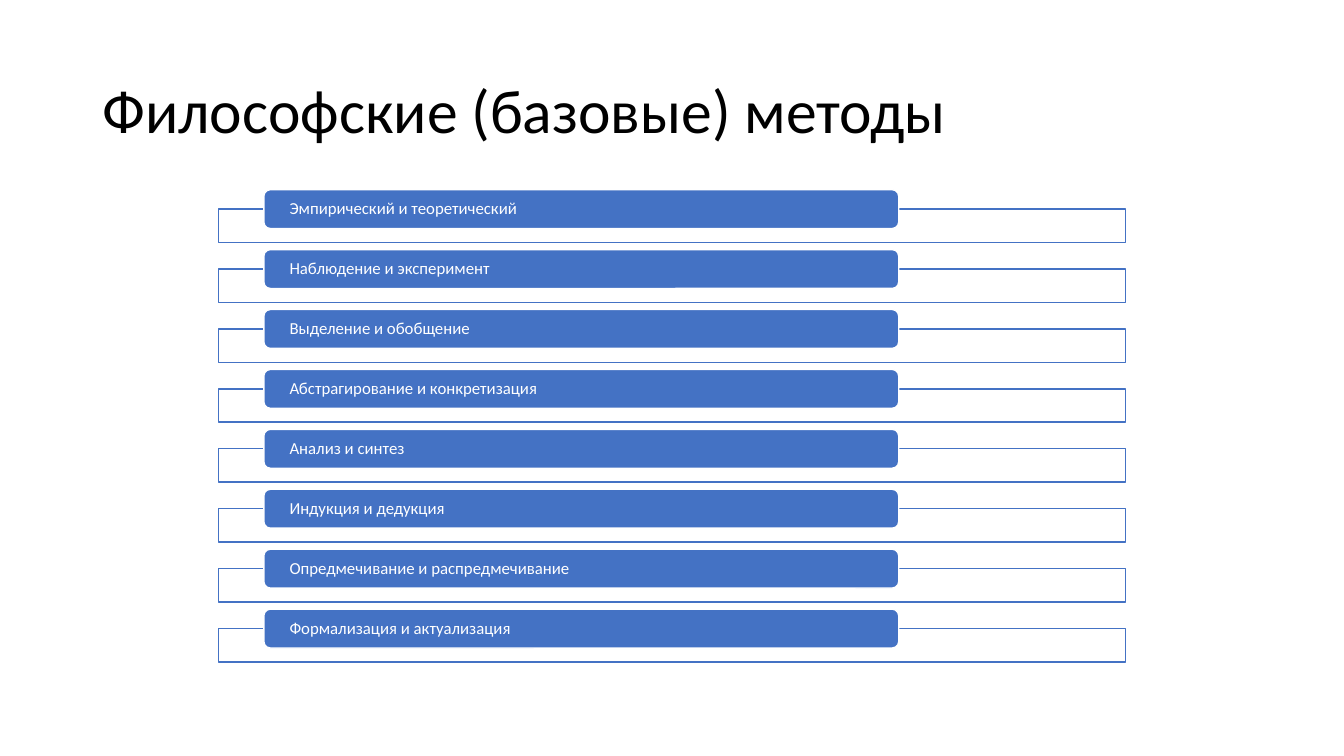
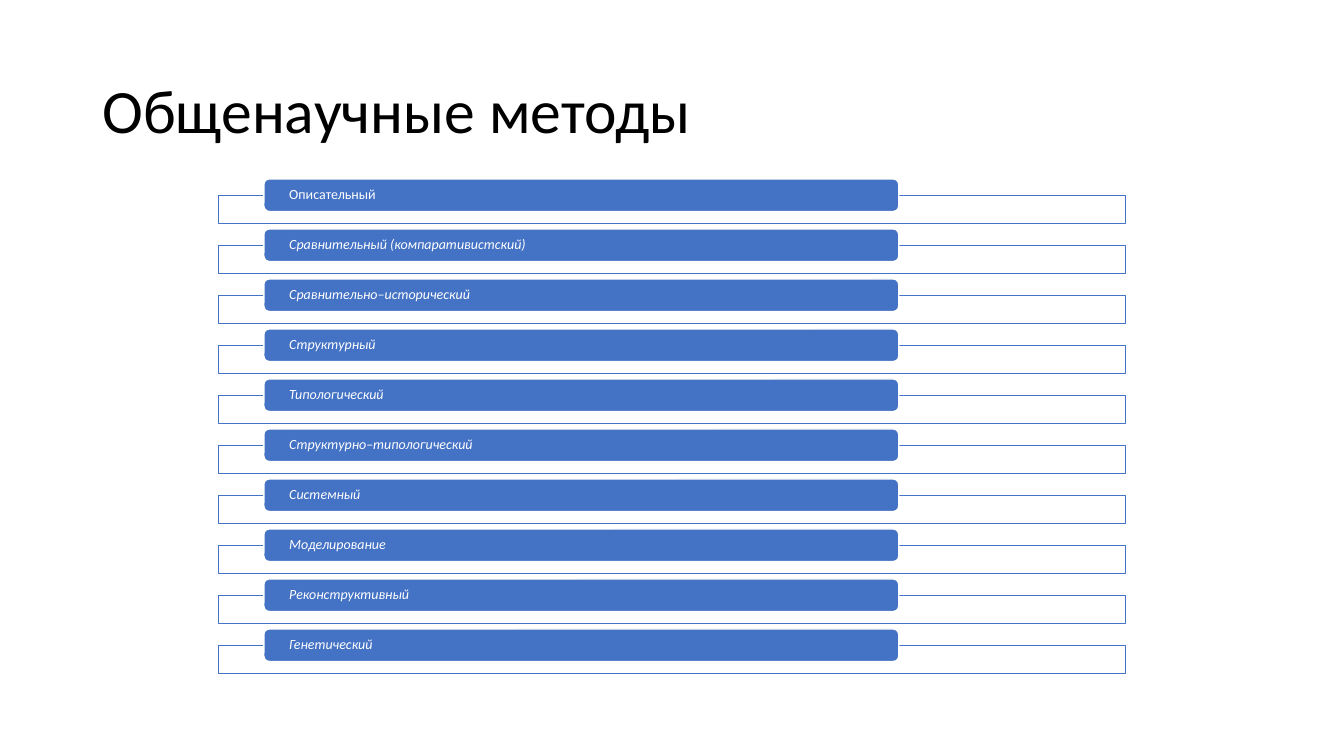
from dataclasses import dataclass

from lxml.etree import SubElement
from pptx import Presentation
from pptx.dml.color import RGBColor as Rgb
from pptx.enum.shapes import MSO_SHAPE as Shape
from pptx.enum.text import MSO_ANCHOR as Anchor, PP_ALIGN as Align
from pptx.oxml.ns import qn
from pptx.util import Cm, Pt


@dataclass(frozen=True)
class Theme:
    font: str = "Calibri"
    accent: Rgb = Rgb(0x44, 0x72, 0xC4)
    white: Rgb = Rgb(0xFF, 0xFF, 0xFF)
    black: Rgb = Rgb(0x00, 0x00, 0x00)
    title_size: int = 44
    line_width: int = 1
    line_spacing: float = 0.9
    frame_opacity: int = 90


@dataclass(frozen=True)
class ListLayout:
    """Vertical rhythm of a method list, in centimetres; text size in points."""
    top: float
    pitch: float
    frame_height: float
    bar_height: float
    text_size: int


class MethodDeck:
    FRAME_LEFT, FRAME_WIDTH = 5.5, 22.86
    BAR_LEFT, BAR_WIDTH = 6.65, 16
    BAR_INSET = 0.6

    def __init__(self, theme):
        self.theme = theme
        self.deck = Presentation()
        self.deck.slide_width, self.deck.slide_height = Cm(33.87), Cm(19.05)
        self.page = None

    def add_page(self, title):
        self.page = self.deck.slides.add_slide(self.deck.slide_layouts[6])
        box = self.page.shapes.add_textbox(Cm(2.33), Cm(1.01), Cm(29.21), Cm(3.68))
        self.add_text(box, title, self.theme.title_size, self.theme.black)

    def add_text(self, box, text, size, color, italic=False):
        frame = box.text_frame
        frame.word_wrap = True
        frame.vertical_anchor = Anchor.MIDDLE
        para = frame.paragraphs[0]
        para.alignment = Align.LEFT
        para.line_spacing = self.theme.line_spacing
        span = para.add_run()
        span.text = text
        span.font.name = self.theme.font
        span.font.size = Pt(size)
        span.font.color.rgb = color
        span.font.italic = italic

    def add_box(self, kind, left, top, width, height, fill, line):
        box = self.page.shapes.add_shape(kind, Cm(left), Cm(top), Cm(width), Cm(height))
        box.shadow.inherit = False
        box.fill.solid()
        box.fill.fore_color.rgb = fill
        box.line.color.rgb = line
        box.line.width = Pt(self.theme.line_width)
        return box

    def add_frame(self, top, height):
        box = self.add_box(Shape.RECTANGLE, self.FRAME_LEFT, top, self.FRAME_WIDTH,
                           height, self.theme.white, self.theme.accent)
        # Slightly transparent fill
        color = box.element.spPr.find(qn("a:solidFill"))[0]
        SubElement(color, qn("a:alpha"), val=str(self.theme.frame_opacity * 1000))

    def add_bar(self, top, height, text, size, italic):
        box = self.add_box(Shape.ROUNDED_RECTANGLE, self.BAR_LEFT, top, self.BAR_WIDTH,
                           height, self.theme.accent, self.theme.white)
        frame = box.text_frame
        frame.margin_left = frame.margin_right = Cm(self.BAR_INSET)
        frame.margin_top = frame.margin_bottom = 0
        self.add_text(box, text, size, self.theme.white, italic)

    def add_list(self, methods, layout, italic_from):
        for index, method in enumerate(methods):
            top = layout.top + index * layout.pitch
            self.add_frame(top, layout.frame_height)
            # Each bar is centred on the upper edge of its frame
            self.add_bar(top - layout.bar_height / 2, layout.bar_height, method,
                         layout.text_size, index >= italic_from)

    def save(self):
        self.deck.save("out.pptx")


PHILOSOPHICAL = [
    "Эмпирический и теоретический",
    "Наблюдение и эксперимент",
    "Выделение и обобщение",
    "Абстрагирование и конкретизация",
    "Анализ и синтез",
    "Индукция и дедукция",
    "Опредмечивание и распредмечивание",
    "Формализация и актуализация",
]
GENERAL = [
    "Описательный",
    "Сравнительный (компаративистский)",
    "Сравнительно–исторический",
    "Структурный",
    "Типологический",
    "Структурно–типологический",
    "Системный",
    "Моделирование",
    "Реконструктивный",
    "Генетический",
]


def main():
    deck = MethodDeck(Theme())

    # Philosophical methods: all upright
    deck.add_page("Философские (базовые) методы")
    deck.add_list(PHILOSOPHICAL, ListLayout(5.27, 1.51, 0.84, 0.98, 12),
                  italic_from=len(PHILOSOPHICAL))

    # General scientific methods: italic after the first
    deck.add_page("Общенаучные методы")
    deck.add_list(GENERAL, ListLayout(4.92, 1.26, 0.71, 0.82, 10), italic_from=1)

    deck.save()


if __name__ == "__main__":
    main()
